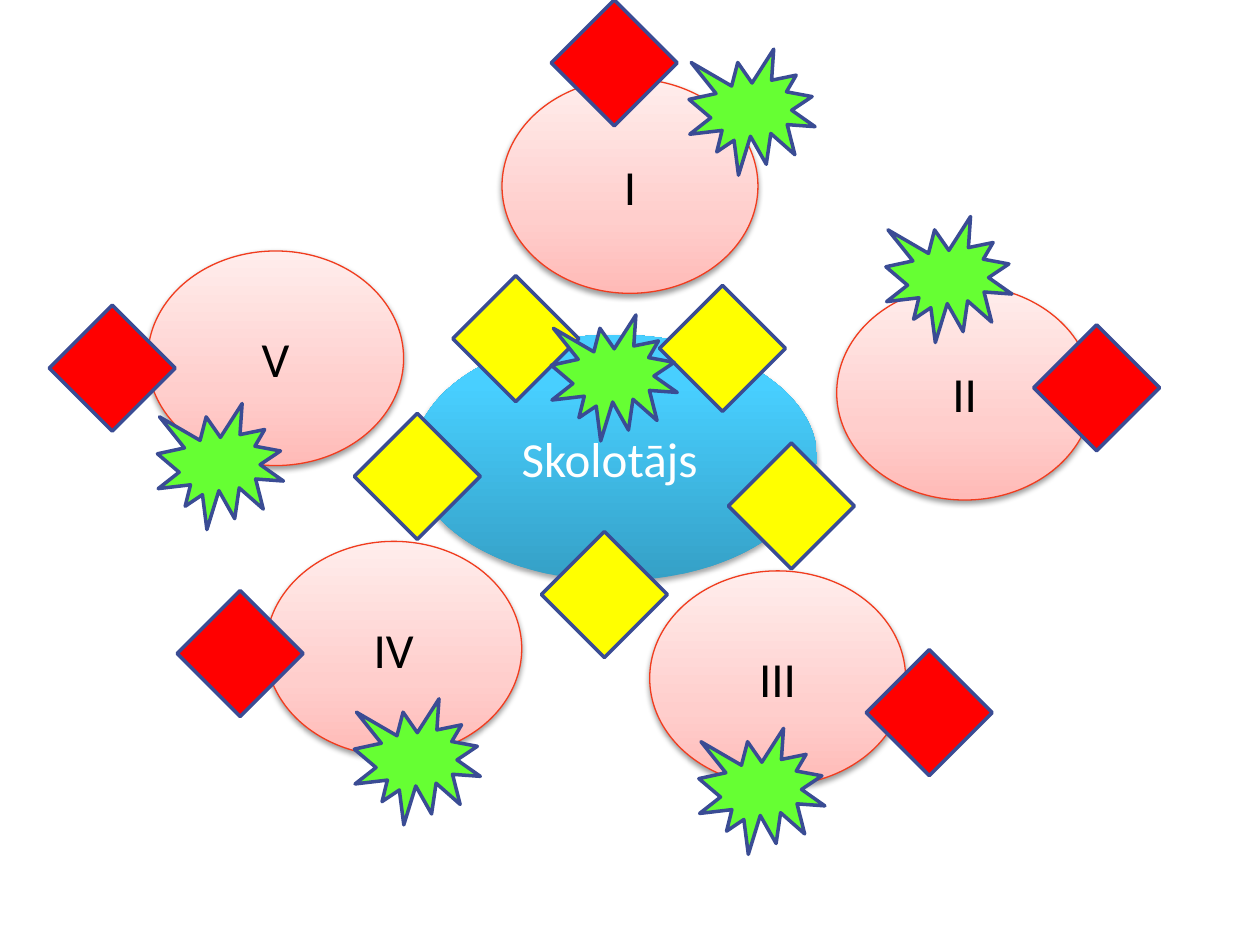
from copy import deepcopy

from lxml import etree
from pptx import Presentation
from pptx import util as u
from pptx.dml.color import RGBColor
from pptx.enum import shapes, text
from pptx.oxml.ns import qn

PX = 7143.75  # EMU: 128 px to the inch
FORMS = shapes.MSO_SHAPE
BADGE = 128
GROUP = (260, 218)


def px(n):
    return u.Emu(round(n * PX))


def tint(code):
    return RGBColor.from_string(code)


class Board:
    edge = "3A4C94"
    font = {"name": "Calibri", "size": u.Pt(28)}
    blue = [(0, "35A0C6"), (0.8, "48CFFF"), (1, "49CFFF")]
    pink = [(0, "FFBAB7"), (0.35, "FFCECC"), (1, "FFEDEC")]

    def __init__(self, slide):
        self.slide = slide

    def form(self, kind, left, top, wide, high):
        shape = self.slide.shapes.add_shape(kind, px(left), px(top), px(wide), px(high))
        shape.shadow.inherit = False
        return shape

    def line(self, shape, color, width):
        shape.line.color.rgb = tint(color)
        shape.line.width = u.Pt(width)

    def blend(self, shape, stops):
        """Fill with a three-stop gradient that rises from the bottom."""
        fill = shape.fill
        fill.gradient()
        fill.gradient_angle = 90
        items = shape.element.spPr.find(".//" + qn("a:gsLst"))
        items.insert(1, deepcopy(items[0]))
        for stop, (place, color) in zip(fill.gradient_stops, stops):
            stop.position = place
            stop.color.rgb = tint(color)

    def shade(self, shape, drop, alpha):
        """Cast a soft black shadow straight down."""
        effects = shape.element.spPr.find(qn("a:effectLst"))
        outer = etree.SubElement(effects, qn("a:outerShdw"), {
            "blurRad": str(u.Pt(3.1)), "dist": str(u.Pt(drop)),
            "dir": "5400000", "rotWithShape": "0"})
        black = etree.SubElement(outer, qn("a:srgbClr"), val="000000")
        etree.SubElement(black, qn("a:alpha"), val=str(alpha * 1000))

    def label(self, shape, words, color):
        frame = shape.text_frame
        frame.vertical_anchor = text.MSO_ANCHOR.MIDDLE
        para = frame.paragraphs[0]
        para.alignment = text.PP_ALIGN.CENTER
        run = para.add_run()
        run.text = words
        for key, value in self.font.items():
            setattr(run.font, key, value)
        run.font.color.rgb = tint(color)

    def teacher(self, words, left, top, wide, high):
        oval = self.form(FORMS.OVAL, left, top, wide, high)
        self.blend(oval, self.blue)
        oval.line.fill.background()
        self.shade(oval, 1.8, 35)
        self.label(oval, words, "FFFFFF")

    def group(self, words, left, top):
        oval = self.form(FORMS.OVAL, left, top, *GROUP)
        self.blend(oval, self.pink)
        self.line(oval, "F13C1E", 0.75)
        self.shade(oval, 1.6, 38)
        self.label(oval, words, "000000")

    def badge(self, kind, color, left, top):
        mark = self.form(kind, left, top, BADGE, BADGE)
        mark.fill.solid()
        mark.fill.fore_color.rgb = tint(color)
        self.line(mark, self.edge, 2)


GROUPS = [("I", 510, 80), ("III", 660, 580), ("V", 150, 255),
          ("IV", 270, 550), ("II", 850, 290)]
BADGES = [
    (FORMS.DIAMOND, "FF0000",
     [(1050, 330), (560, 0), (50, 310), (180, 600), (880, 660)]),
    (FORMS.DIAMOND, "FFFF00",
     [(670, 290), (460, 280), (740, 450), (360, 420), (550, 540)]),
    (FORMS.EXPLOSION1, "66FF33",
     [(900, 220), (710, 740), (360, 710), (160, 410), (700, 50), (560, 320)]),
]


def main():
    deck = Presentation()
    deck.slide_width, deck.slide_height = px(1280), px(960)
    board = Board(deck.slides.add_slide(deck.slide_layouts[6]))
    board.teacher("Skolotājs ", 420, 340, 410, 250)
    for name, left, top in GROUPS:
        board.group(name, left, top)
    for kind, color, spots in BADGES:
        for left, top in spots:
            board.badge(kind, color, left, top)
    deck.save("out.pptx")


if __name__ == "__main__":
    main()
